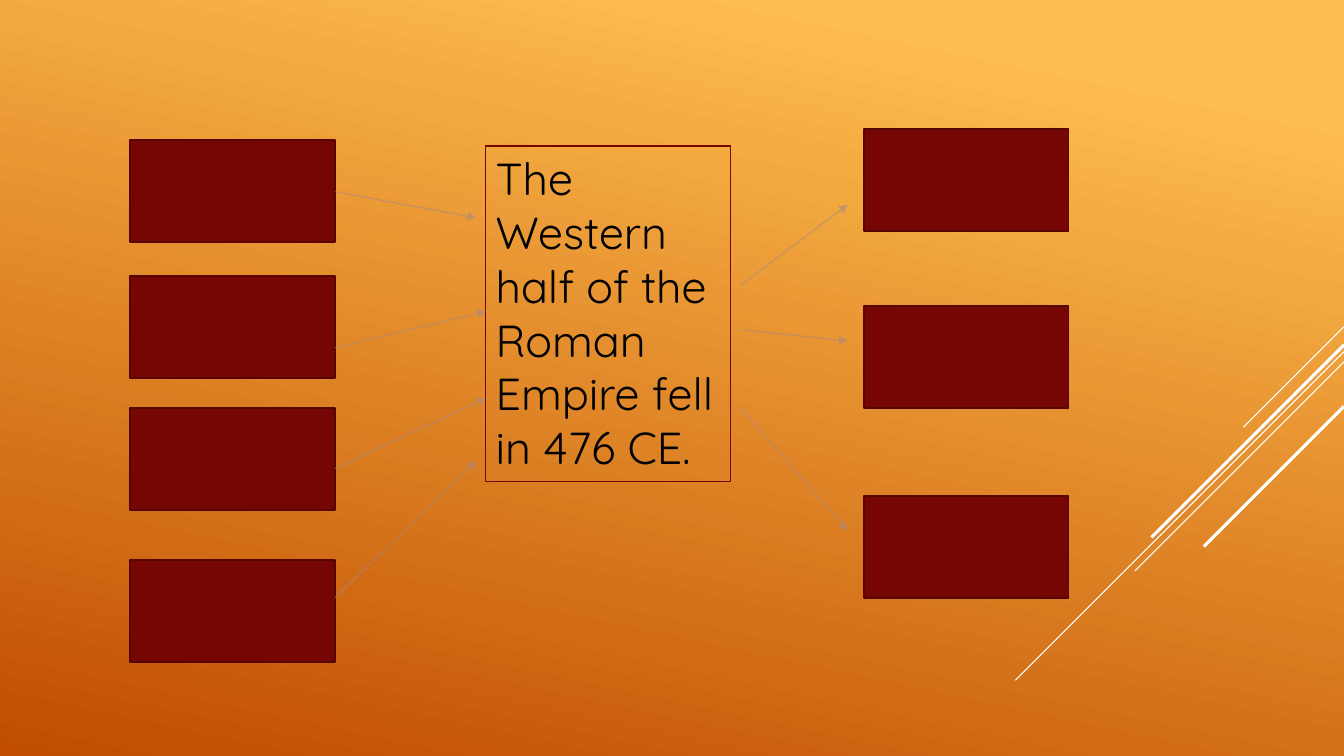
from lxml.etree import SubElement
from pptx import Presentation
from pptx.dml.color import RGBColor
from pptx.enum.shapes import MSO_CONNECTOR, MSO_SHAPE
from pptx.enum.text import MSO_ANCHOR, MSO_AUTO_SIZE, PP_ALIGN
from pptx.oxml.ns import qn
from pptx.util import Cm, Pt

COLORS = {
    "sky": "FFBF50", "ember": "C04D00", "box": "760603", "edge": "570402",
    "arrow": "A58989", "streak": "FFFFFF", "text": "000000",
}
SLIDE_WIDTH, SLIDE_HEIGHT = 33.87, 19.05
BOX_WIDTH, BOX_HEIGHT = 5.16, 2.57

# Regions: left, top, width, height in centimetres
CAUSES = (3.28, 3.53, 8.96, 13.16)
EVENT = (12.24, 3.68, 6.17, 8.46)
EFFECTS = (18.67, 3.25, 8.26, 11.82)
STREAKS = (25.57, 8.23, 8.3, 8.91)

# Box tops and arrow ends, measured from the corner of their region
CAUSE_TOPS = (0, 3.43, 6.76, 10.59)
CAUSE_ARROWS = ((1.3, 8.71, 1.96), (5.23, 8.96, 4.32),
                (8.28, 8.96, 6.5), (11.53, 8.71, 8.1))
EFFECT_TOPS = (0, 4.47, 9.25)
EFFECT_ARROWS = ((3.94, 1.91), (5.06, 5.34), (7.04, 10.11))

# Streaks: start down the right edge, diagonal reach, line width
STREAK_LINES = ((0, 2.54, 0.75), (0.63, 8.28, 0.75), (0.89, 5.27, 0.75),
                (0.46, 4.85, 2.25), (2.01, 3.53, 2.25))


def apply_format(target, values):
    for name, value in values.items():
        setattr(target, name, value)


def color(name):
    return RGBColor.from_string(COLORS[name])


def paint_background(slide):
    fill = slide.background.fill
    fill.gradient()
    fill.gradient_angle = 258
    for stop, position, name in zip(fill.gradient_stops, (0.1, 1), ("sky", "ember")):
        stop.position = position
        stop.color.rgb = color(name)


def add_rectangle(slide, box, line_color, line_width, fill_color=None):
    shape = slide.shapes.add_shape(MSO_SHAPE.RECTANGLE, *map(Cm, box))
    shape.shadow.inherit = False
    if fill_color:
        shape.fill.solid()
        shape.fill.fore_color.rgb = color(fill_color)
    else:
        shape.fill.background()
    shape.line.color.rgb = color(line_color)
    shape.line.width = Pt(line_width)
    return shape


def add_line(slide, start, end, line_color, width=0.75):
    line = slide.shapes.add_connector(MSO_CONNECTOR.STRAIGHT, *map(Cm, start + end))
    line.line.color.rgb = color(line_color)
    line.line.width = Pt(width)
    SubElement(line._element.spPr, qn("a:effectLst"))
    return line


def add_arrow(slide, start, end):
    arrow = add_line(slide, start, end, "arrow")
    outline = arrow.line._get_or_add_ln()
    SubElement(outline.find(".//" + qn("a:srgbClr")), qn("a:alpha"), val="60000")
    SubElement(outline, qn("a:tailEnd"), type="triangle")


def add_streaks(slide, box):
    left, top, width, _ = box
    right = left + width
    for offset, reach, line_width in STREAK_LINES:
        start = (right, top + offset)
        end = (right - reach, top + offset + reach)
        add_line(slide, start, end, "streak", line_width)


def add_event(slide, box):
    shape = add_rectangle(slide, box, "box", 0.75)
    frame = shape.text_frame
    apply_format(frame, {"word_wrap": True, "vertical_anchor": MSO_ANCHOR.TOP,
                         "auto_size": MSO_AUTO_SIZE.SHAPE_TO_FIT_TEXT})
    paragraph = frame.paragraphs[0]
    paragraph.alignment = PP_ALIGN.LEFT
    run = paragraph.add_run()
    run.text = "The Western half of the Roman Empire fell in 476 CE."
    apply_format(run.font, {"name": "Quicksand", "size": Pt(32)})
    run.font.color.rgb = color("text")


def add_box_column(slide, left, top, offsets):
    for offset in offsets:
        box = (left, top + offset, BOX_WIDTH, BOX_HEIGHT)
        add_rectangle(slide, box, "edge", 1.25, "box")


def add_causes(slide, box):
    left, top, _, _ = box
    add_box_column(slide, left, top, CAUSE_TOPS)
    for start_y, end_x, end_y in CAUSE_ARROWS:
        add_arrow(slide, (left + BOX_WIDTH, top + start_y), (left + end_x, top + end_y))


def add_effects(slide, box):
    left, top, width, _ = box
    column_left = left + width - BOX_WIDTH
    add_box_column(slide, column_left, top, EFFECT_TOPS)
    for start_y, end_y in EFFECT_ARROWS:
        add_arrow(slide, (left, top + start_y), (column_left - 0.41, top + end_y))


def main():
    presentation = Presentation()
    apply_format(presentation, {"slide_width": Cm(SLIDE_WIDTH),
                                "slide_height": Cm(SLIDE_HEIGHT)})
    slide = presentation.slides.add_slide(presentation.slide_layouts[6])
    paint_background(slide)
    add_streaks(slide, STREAKS)
    add_event(slide, EVENT)
    add_causes(slide, CAUSES)
    add_effects(slide, EFFECTS)
    presentation.save("out.pptx")


if __name__ == "__main__":
    main()
